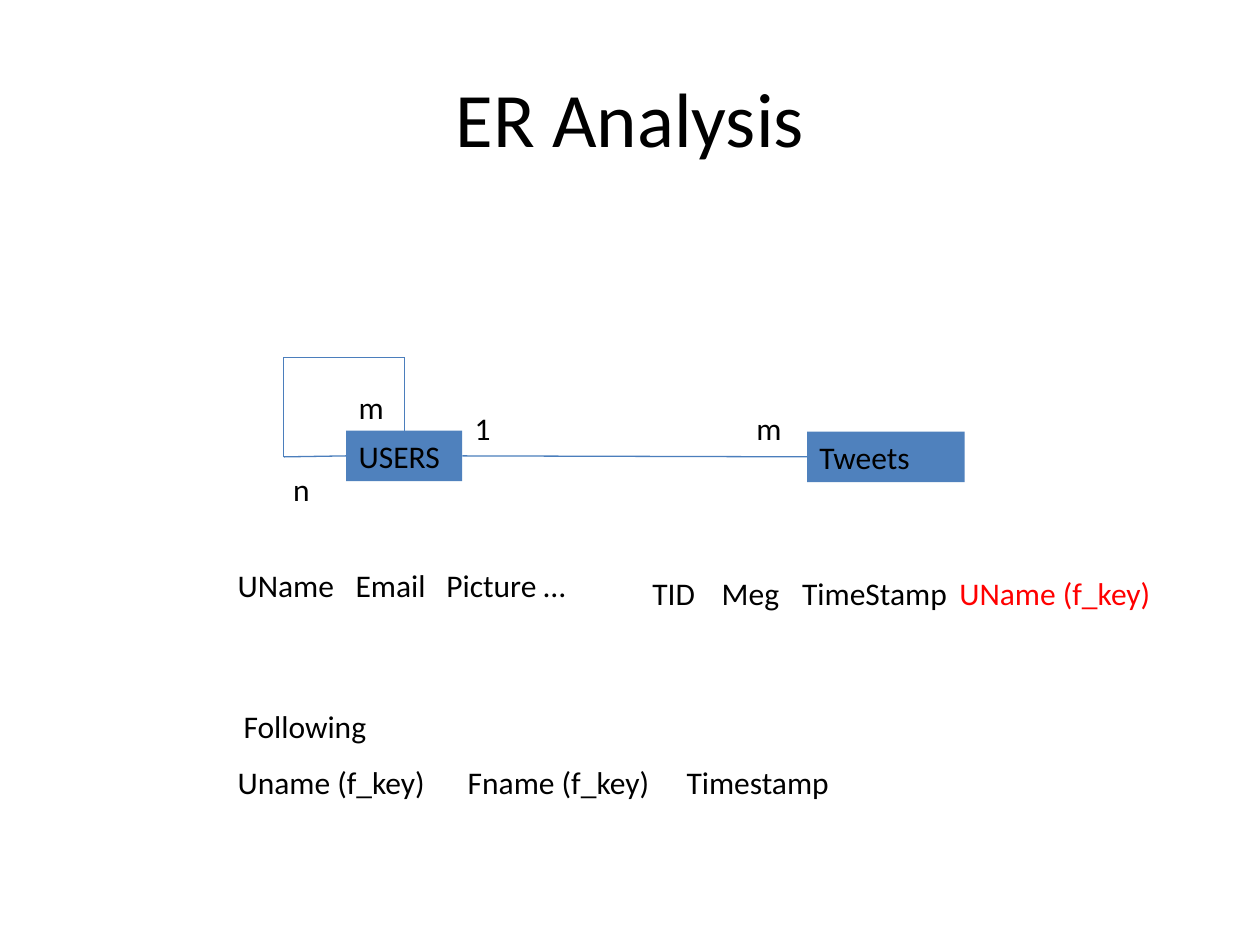
from dataclasses import dataclass

from lxml import etree
from pptx import Presentation
from pptx import util as u
from pptx.dml.color import RGBColor
from pptx.enum import shapes, text
from pptx.oxml.ns import qn


@dataclass(frozen=True)
class Theme:
    font: str = "Calibri"
    title_size: float = 44
    body_size: float = 18
    line_width: float = 0.75
    ink: str = "000000"
    foreign_key: str = "FF0000"
    entity: str = "4F81BD"
    relation: str = "4B7EBC"


def apply(target, values):
    for name, value in values.items():
        setattr(target, name, value)


class Diagram:
    row_height = 1.02

    def __init__(self, slide, theme):
        self.slide = slide
        self.theme = theme

    def fill_text(self, shape, runs, size, alignment, anchor, tabs=()):
        apply(shape.text_frame, {"word_wrap": True, "vertical_anchor": anchor})
        paragraph = shape.text_frame.paragraphs[0]
        paragraph.alignment = alignment
        if tabs:
            tab_list = etree.SubElement(paragraph._p.get_or_add_pPr(), qn("a:tabLst"))
            for position in tabs:
                etree.SubElement(tab_list, qn("a:tab"), pos=str(u.Cm(position)), algn="l")
        for content, color in runs:
            run = paragraph.add_run()
            run.text = content
            apply(run.font, {"name": self.theme.font, "size": u.Pt(size)})
            run.font.color.rgb = RGBColor.from_string(color)

    def title(self, content, left, top, width, height):
        shape = self.slide.shapes.add_textbox(*map(u.Cm, (left, top, width, height)))
        self.fill_text(shape, [(content, self.theme.ink)], self.theme.title_size,
                       text.PP_ALIGN.CENTER, text.MSO_ANCHOR.MIDDLE)

    def body(self, shape, runs, tabs=()):
        self.fill_text(shape, runs, self.theme.body_size,
                       text.PP_ALIGN.LEFT, text.MSO_ANCHOR.TOP, tabs)
        shape.text_frame.auto_size = text.MSO_AUTO_SIZE.SHAPE_TO_FIT_TEXT

    def label(self, runs, left, top, width, tabs=()):
        if isinstance(runs, str):
            runs = [(runs, self.theme.ink)]
        shape = self.slide.shapes.add_textbox(*map(u.Cm, (left, top, width, self.row_height)))
        self.body(shape, runs, tabs)

    def entity(self, name, left, top, width):
        shape = self.slide.shapes.add_shape(
            shapes.MSO_SHAPE.RECTANGLE, *map(u.Cm, (left, top, width, self.row_height)))
        shape.shadow.inherit = False
        shape.fill.solid()
        shape.fill.fore_color.rgb = RGBColor.from_string(self.theme.entity)
        shape.line.fill.background()
        self.body(shape, [(name, self.theme.ink)])
        return shape

    def relation(self, start=(0, 0), end=(0, 0), begin_at=None, end_at=None):
        connector = self.slide.shapes.add_connector(
            shapes.MSO_CONNECTOR.STRAIGHT, *map(u.Cm, (*start, *end)))
        if begin_at:
            connector.begin_connect(*begin_at)
        if end_at:
            connector.end_connect(*end_at)
        connector.line.width = u.Pt(self.theme.line_width)
        connector.line.color.rgb = RGBColor.from_string(self.theme.relation)
        etree.SubElement(connector._element.spPr, qn("a:effectLst"))


def main():
    presentation = Presentation()
    apply(presentation, {"slide_width": u.Cm(25.4), "slide_height": u.Cm(19.05)})
    theme = Theme()
    diagram = Diagram(presentation.slides.add_slide(presentation.slide_layouts[6]), theme)

    diagram.title("ER Analysis", 1.27, 0.76, 22.86, 3.18)
    users = diagram.entity("USERS", 6.98, 8.68, 2.34)
    tweets = diagram.entity("Tweets", 16.27, 8.7, 3.18)

    diagram.relation(begin_at=(users, 3), end_at=(tweets, 1))
    above_users, top_left, beside_users = (8.15, 7.2), (5.72, 7.2), (5.72, 9.21)
    diagram.relation(end=above_users, begin_at=(users, 0))
    diagram.relation(above_users, top_left)
    diagram.relation(top_left, beside_users)
    diagram.relation(beside_users, end_at=(users, 1))

    for cardinality, left, top in (("1", 9.32, 8.13), ("m", 15, 8.13),
                                   ("m", 6.98, 7.69), ("n", 5.66, 9.35)):
        diagram.label(cardinality, left, top, 1.27)

    diagram.label([("TID\tMeg\tTimeStamp\t", theme.ink), ("UName (f_key)", theme.foreign_key)],
                  12.9, 11.44, 11.43, (1.4, 3.02, 6.19))
    diagram.label("UName\tEmail\tPicture …", 4.54, 11.28, 7.2, (2.38, 4.21))
    diagram.label("Uname (f_key)\tFname (f_key)\tTimestamp", 4.54, 15.25, 14.7, (4.64, 9.05))
    diagram.label("Following", 4.66, 14.12, 4.87)

    presentation.save("out.pptx")


if __name__ == "__main__":
    main()
